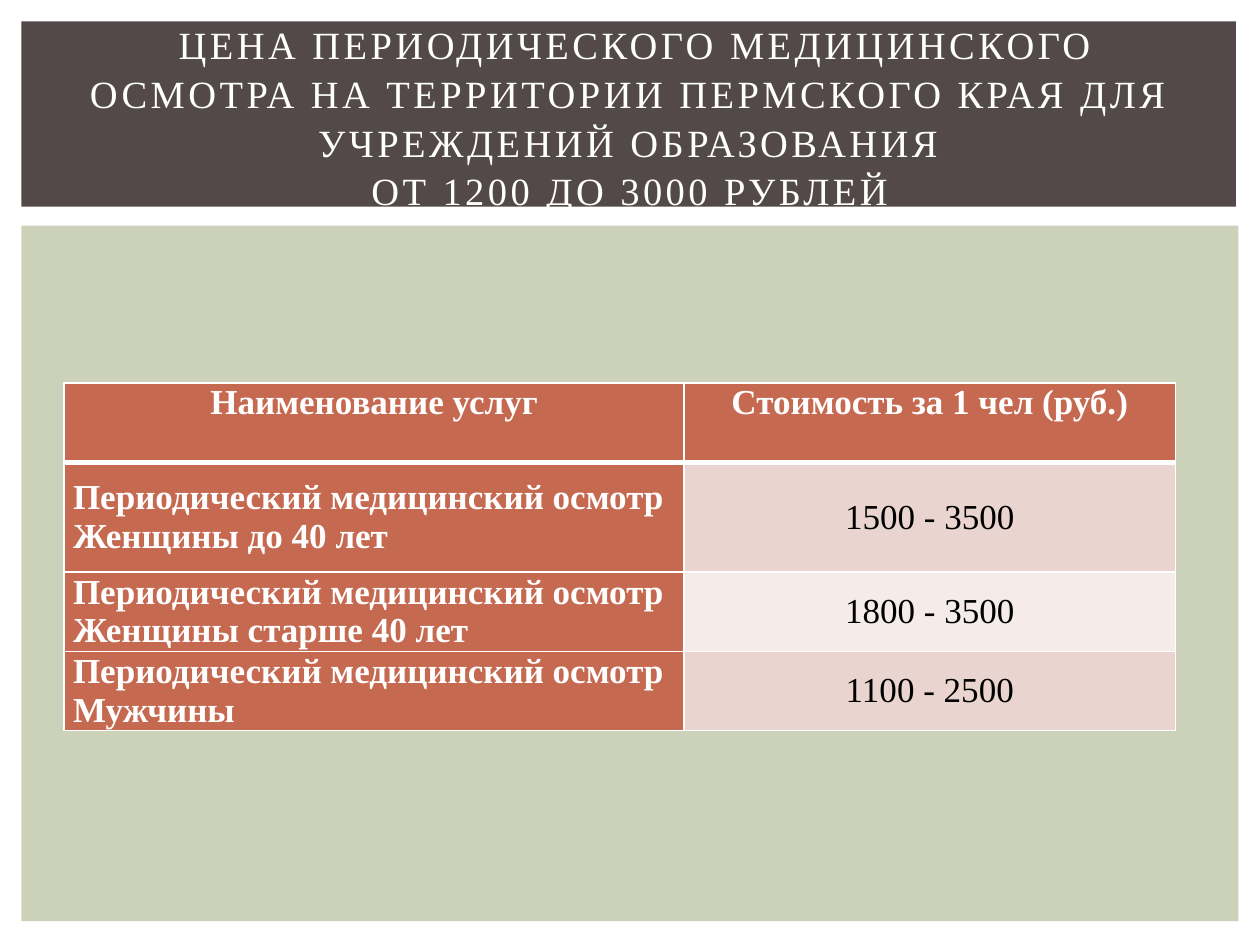
from lxml import etree
from pptx import Presentation
from pptx.dml.color import RGBColor
from pptx.enum import shapes, text
from pptx.oxml.ns import qn
from pptx.util import Inches, Pt

FONT = "Times New Roman"
WHITE = RGBColor(0xFF, 0xFF, 0xFF)
BLACK = RGBColor(0, 0, 0)
BROWN = RGBColor(0x53, 0x49, 0x49)
SAGE = RGBColor(0xCC, 0xD1, 0xB9)
RUST = RGBColor(0xC6, 0x69, 0x51)
PINK = RGBColor(0xEA, 0xD4, 0xD0)
PALE_PINK = RGBColor(0xF5, 0xEB, 0xE9)

TITLE_LINES = [
    "ЦЕНА ПЕРИОДИЧЕСКОГО МЕДИЦИНСКОГО ОСМОТРА НА ТЕРРИТОРИИ "
    "ПЕРМСКОГО КРАЯ ДЛЯ УЧРЕЖДЕНИЙ ОБРАЗОВАНИЯ",
    "ОТ 1200 ДО 3000 РУБЛЕЙ",
]
HEADERS = ["Наименование услуг", "Стоимость за 1 чел (руб.)"]
EXAM = "Периодический медицинский осмотр"
PRICES = [
    ("Женщины до 40 лет", "1500 - 3500"),
    ("Женщины старше 40 лет", "1800 - 3500"),
    ("Мужчины", "1100 - 2500"),
]
COLUMN_WIDTHS = [4.92, 3.9]
ROW_HEIGHTS = [0.63, 0.87, 0.63, 0.63]


def add_panel(page, left, top, width, height, color):
    panel = page.shapes.add_shape(
        shapes.MSO_SHAPE.RECTANGLE,
        Inches(left), Inches(top), Inches(width), Inches(height))
    panel.shadow.inherit = False
    panel.fill.solid()
    panel.fill.fore_color.rgb = color
    panel.line.fill.background()


def add_span(para, words, size, color, bold=False):
    span = para.add_run()
    span.text = words
    span.font.name = FONT
    span.font.size = Pt(size)
    span.font.bold = bold
    span.font.color.rgb = color
    return span


def fill_title(page):
    """Place the title in front of the panels, with letters spaced by 2 pt."""
    title = page.shapes.title
    page.shapes._spTree.append(title._element)
    title.left, title.top = Inches(0.5), Inches(0.36)
    title.width, title.height = Inches(9), Inches(1.1)
    frame = title.text_frame
    frame.word_wrap = True
    frame.auto_size = text.MSO_AUTO_SIZE.NONE
    frame.vertical_anchor = text.MSO_ANCHOR.MIDDLE
    para = frame.paragraphs[0]
    para.alignment = text.PP_ALIGN.CENTER
    para.line_spacing = 1.05
    first, last = TITLE_LINES
    spans = [add_span(para, " ", 23.5, WHITE), add_span(para, first, 22, WHITE)]
    para.add_line_break()
    spans.append(add_span(para, last, 22, WHITE))
    for span in spans:
        span._r.get_or_add_rPr().set("spc", "200")


def set_borders(cell, bottom_width):
    """Draw white cell borders; they must come before the fill in the XML."""
    properties = cell._tc.get_or_add_tcPr()
    widths = {"a:lnL": 1, "a:lnR": 1, "a:lnT": 1, "a:lnB": bottom_width}
    for place, (tag, width) in enumerate(widths.items()):
        line = etree.Element(qn(tag), w=str(Pt(width)))
        fill = etree.SubElement(line, qn("a:solidFill"))
        etree.SubElement(fill, qn("a:srgbClr"), val=str(WHITE))
        properties.insert(place, line)


def fill_cell(cell, lines, fill, color, bold, align, anchor, bottom_width=1):
    cell.margin_left = cell.margin_right = Inches(0.07)
    cell.margin_top = cell.margin_bottom = 0
    cell.vertical_anchor = anchor
    cell.fill.solid()
    cell.fill.fore_color.rgb = fill
    set_borders(cell, bottom_width)
    frame = cell.text_frame
    for number, words in enumerate(lines):
        para = frame.add_paragraph() if number else frame.paragraphs[0]
        para.alignment = align
        add_span(para, words, 20, color, bold)


def add_price_table(page):
    table = page.shapes.add_table(
        len(ROW_HEIGHTS), len(COLUMN_WIDTHS), Inches(0.51), Inches(3.04),
        Inches(sum(COLUMN_WIDTHS)), Inches(sum(ROW_HEIGHTS))).table
    for column, width in zip(table.columns, COLUMN_WIDTHS):
        column.width = Inches(width)
    for row, height in zip(table.rows, ROW_HEIGHTS):
        row.height = Inches(height)

    left, center = text.PP_ALIGN.LEFT, text.PP_ALIGN.CENTER
    top, middle = text.MSO_ANCHOR.TOP, text.MSO_ANCHOR.MIDDLE
    for column, header in enumerate(HEADERS):
        fill_cell(table.cell(0, column), [header], RUST, WHITE, True,
                  center, top, bottom_width=3)
    for row, (group, price) in enumerate(PRICES, start=1):
        fill_cell(table.cell(row, 0), [EXAM, group], RUST, WHITE, True,
                  left, middle)
        fill_cell(table.cell(row, 1), [price], PINK if row % 2 else PALE_PINK,
                  BLACK, False, center, middle)


def main():
    deck = Presentation()
    deck.slide_width, deck.slide_height = Inches(10), Inches(7.5)
    page = deck.slides.add_slide(deck.slide_layouts[5])
    add_panel(page, 0.17, 1.79, 9.66, 5.52, SAGE)
    add_panel(page, 0.17, 0.17, 9.64, 1.47, BROWN)
    add_price_table(page)
    fill_title(page)
    deck.save("out.pptx")


if __name__ == "__main__":
    main()
